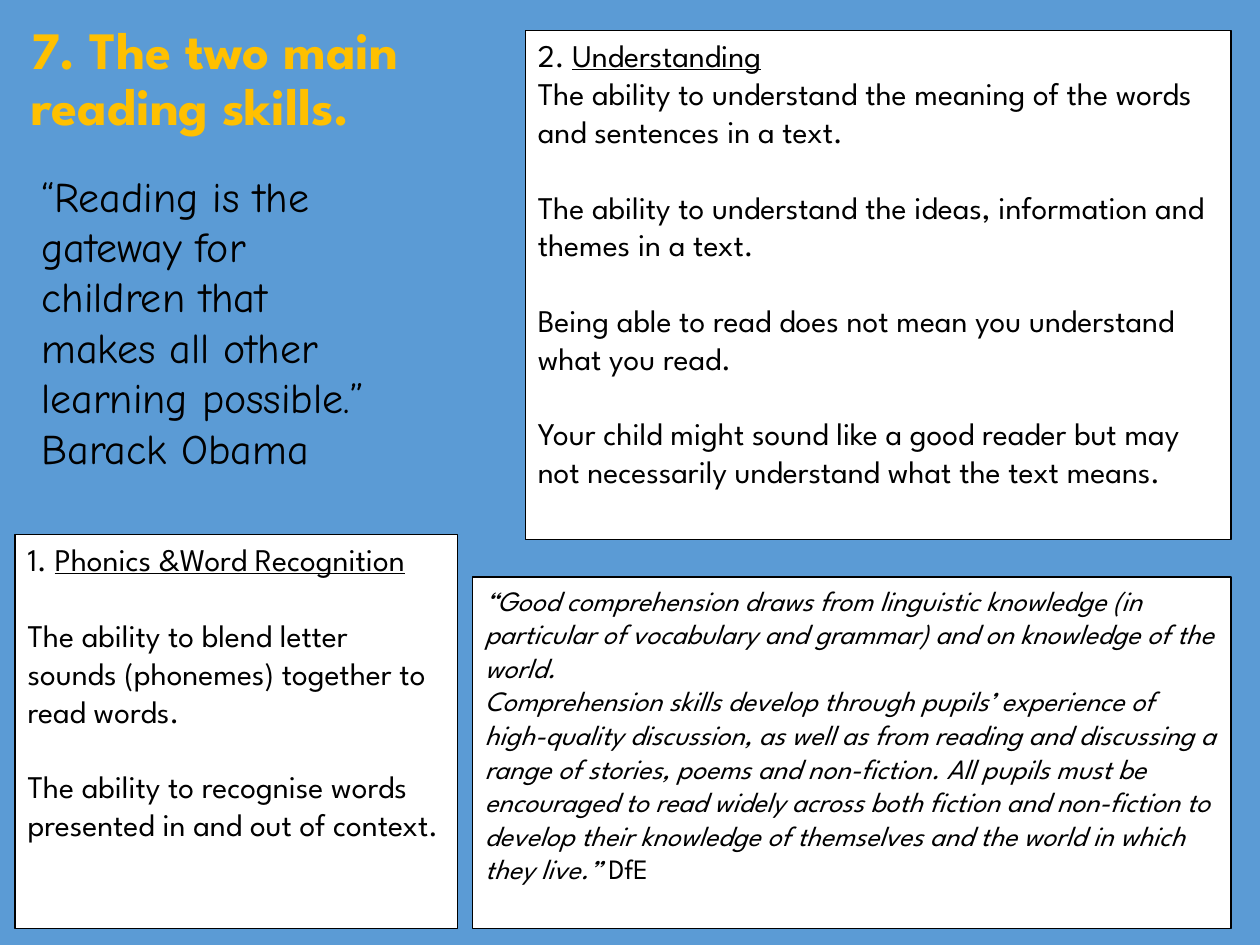
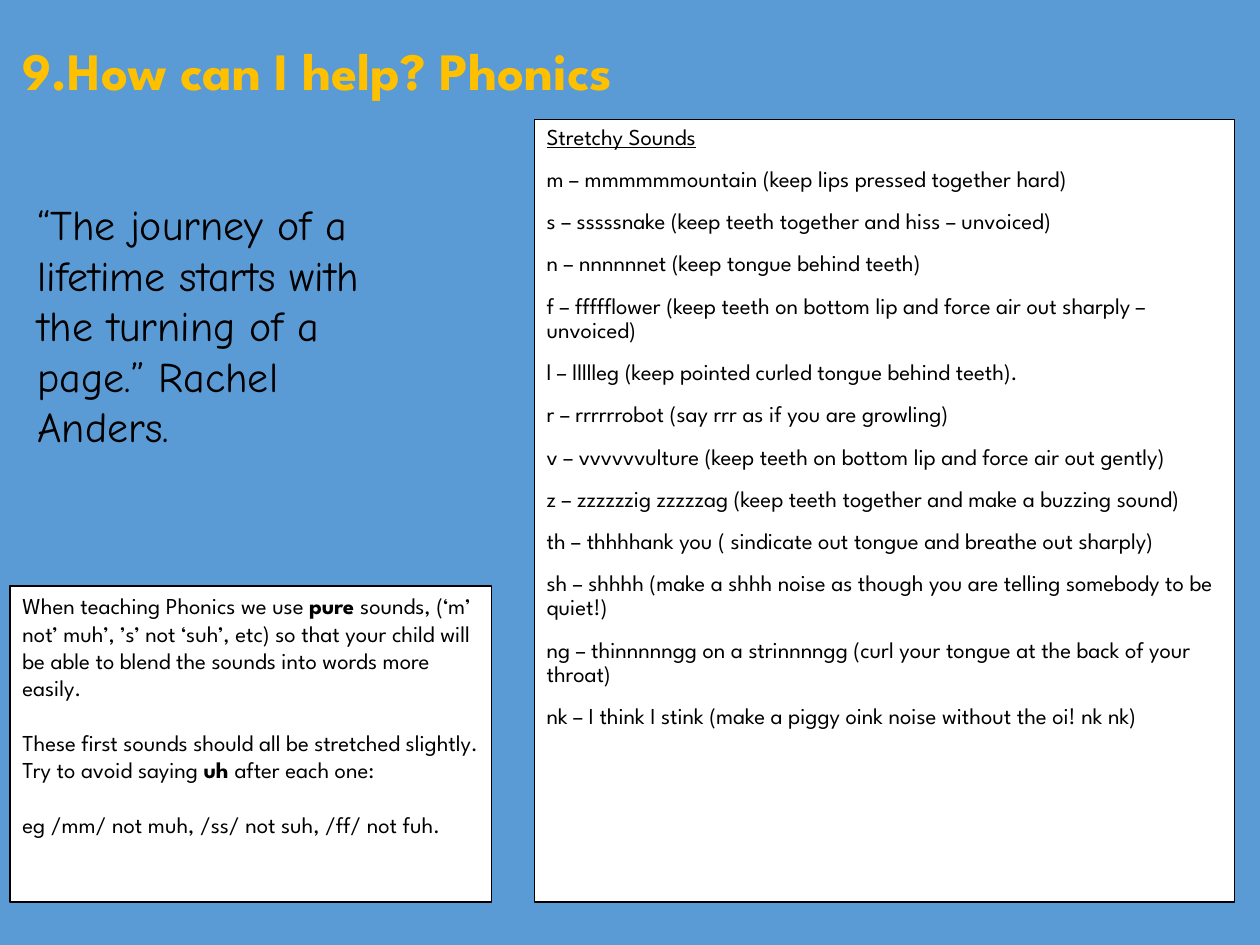
from dataclasses import dataclass

import pptx
import pptx.dml.color
import pptx.enum.shapes
import pptx.enum.text
import pptx.util

Inches = pptx.util.Inches
RGBColor = pptx.dml.color.RGBColor

# Shared look
SKY = RGBColor(0x5B, 0x9B, 0xD5)
GOLD = RGBColor(0xFF, 0xC0, 0x00)
WHITE = RGBColor(0xFF, 0xFF, 0xFF)
BLACK = RGBColor(0x00, 0x00, 0x00)
HEADING_FONT = "League Spartan"
QUOTE_FONT = "Comic Neue"
LINE_PITCH = 1.2  # height of one text line relative to its font size


@dataclass(frozen=True)
class Part:
    """A stretch of text with its own emphasis."""
    text: str
    bold: bool = False
    italic: bool = False
    underline: bool = False


Paragraph = tuple[Part, ...]


@dataclass(frozen=True)
class TextStyle:
    size: float
    font: str = HEADING_FONT
    color: RGBColor = BLACK
    gap: float = 0
    line_spacing: float = 1.0
    inset: tuple[float, float] = (0.1, 0.05)


@dataclass(frozen=True)
class Block:
    """Text at a place, in inches; a card has a white, outlined face."""
    left: float
    top: float
    width: float
    height: float
    style: TextStyle
    paragraphs: tuple[Paragraph, ...]
    card: bool = True
    tight: tuple[int, ...] = ()  # paragraphs that follow without a gap


def plain(*texts: str) -> tuple[Paragraph, ...]:
    return tuple((Part(text),) for text in texts)


def spaced(size: float) -> TextStyle:
    """Card text with one line of space between paragraphs."""
    return TextStyle(size, gap=size * LINE_PITCH)


TITLE = TextStyle(30, color=GOLD)
WRAPPED_TITLE = TextStyle(30, color=GOLD, line_spacing=0.9, inset=(0.13, 0.07))
QUOTE = TextStyle(24, QUOTE_FONT)
SOUND_LIST = TextStyle(13, gap=10, line_spacing=0.9)

READING_SKILLS = (
    Block(0.12, 0.12, 3.51, 2.33, WRAPPED_TITLE,
          ((Part("7. The two main reading skills.", bold=True),),), card=False),
    Block(0.12, 4.24, 3.51, 3.13, spaced(18), (
        (Part("1. "), Part("Phonics &Word Recognition", underline=True)),
        *plain("The ability to blend letter sounds (phonemes) together to read words.",
               "The ability to recognise words presented in and out of context."),
    )),
    Block(4.17, 0.24, 5.6, 4.04, spaced(18), (
        (Part("2. "), Part("Understanding", underline=True)),
        *plain("The ability to understand the meaning of the words and sentences in a text.",
               "The ability to understand the ideas, information and themes in a text.",
               "Being able to read does not mean you understand what you read.",
               "Your child might sound like a good reader but may not necessarily "
               "understand what the text means."),
    ), tight=(1,)),
    Block(3.75, 4.58, 6.02, 2.79, TextStyle(16), (
        (Part("“Good comprehension draws from linguistic knowledge (in particular of "
              "vocabulary and grammar) and on knowledge of the world.", italic=True),),
        (Part("Comprehension skills develop through pupils’ experience of high-quality "
              "discussion, as well as from reading and discussing a range of stories, "
              "poems and non-fiction. All pupils must be encouraged to read widely across "
              "both fiction and non-fiction to develop their knowledge of themselves and "
              "the world in which they live.” ", italic=True), Part("DfE")),
    )),
    Block(0.23, 1.3, 2.88, 1.72, QUOTE,
          plain("“Reading is the gateway for children that makes all other learning "
                "possible.” Barack Obama"), card=False),
)

PHONICS_HELP = (
    Block(4.24, 0.95, 5.56, 6.21, SOUND_LIST, (
        (Part("Stretchy Sounds", underline=True),),
        *plain("m – mmmmmmountain (keep lips pressed together hard)",
               "s – sssssnake (keep teeth together and hiss – unvoiced)",
               "n – nnnnnnet (keep tongue behind teeth)",
               "f – ffffflower (keep teeth on bottom lip and force air out sharply – unvoiced)",
               "l – llllleg (keep pointed curled tongue behind teeth).",
               "r – rrrrrrobot (say rrr as if you are growling)",
               "v – vvvvvvulture (keep teeth on bottom lip and force air out gently)",
               "z – zzzzzzig zzzzzag (keep teeth together and make a buzzing sound)",
               "th – thhhhank you ( sindicate out tongue and breathe out sharply)",
               "sh – shhhh (make a shhh noise as though you are telling somebody to be quiet!)",
               "ng – thinnnnngg on a strinnnngg (curl your tongue at the back of your throat)",
               "nk – I think I stink (make a piggy oink noise without the oi! nk nk)"),
    )),
    Block(0.08, 0.25, 5, 1.11, TITLE,
          ((Part("9.How can I help? Phonics", bold=True),),), card=False),
    Block(0.08, 4.65, 3.82, 2.51, spaced(13), (
        (Part("When teaching Phonics we use "), Part("pure ", bold=True),
         Part("sounds, (‘m’ not’ muh’, ’s’ not ‘suh’, etc) so that your child will be able "
              "to blend the sounds into words more easily.")),
        (Part("These first sounds should all be stretched slightly. Try to avoid saying "),
         Part("uh ", bold=True), Part("after each one:")),
        *plain("eg /mm/ not muh, /ss/ not suh, /ff/ not fuh."),
    )),
    Block(0.2, 1.53, 3.19, 1.31, QUOTE,
          plain("“The journey of a lifetime starts with the turning of a page.” "
                "Rachel Anders."), card=False),
)


def write_text(frame: pptx.text.text.TextFrame, block: Block) -> None:
    style = block.style
    frame.word_wrap = True
    frame.auto_size = pptx.enum.text.MSO_AUTO_SIZE.NONE
    frame.vertical_anchor = pptx.enum.text.MSO_ANCHOR.TOP
    frame.margin_left = frame.margin_right = Inches(style.inset[0])
    frame.margin_top = frame.margin_bottom = Inches(style.inset[1])
    for index, parts in enumerate(block.paragraphs):
        paragraph = frame.paragraphs[0] if index == 0 else frame.add_paragraph()
        paragraph.alignment = pptx.enum.text.PP_ALIGN.LEFT
        paragraph.line_spacing = style.line_spacing
        if index > 0 and index not in block.tight:
            paragraph.space_before = pptx.util.Pt(style.gap)
        for part in parts:
            run = paragraph.add_run()
            run.text = part.text
            run.font.name = style.font
            run.font.size = pptx.util.Pt(style.size)
            run.font.color.rgb = style.color
            run.font.bold = part.bold
            run.font.italic = part.italic
            run.font.underline = part.underline


def draw_block(slide: pptx.slide.Slide, block: Block) -> None:
    place = [Inches(n) for n in (block.left, block.top, block.width, block.height)]
    if block.card:
        holder = slide.shapes.add_shape(pptx.enum.shapes.MSO_SHAPE.RECTANGLE, *place)
        holder.shadow.inherit = False
        holder.fill.solid()
        holder.fill.fore_color.rgb = WHITE
        holder.line.color.rgb = BLACK
        holder.line.width = pptx.util.Pt(0.75)
    else:
        holder = slide.shapes.add_textbox(*place)
    write_text(holder.text_frame, block)


def main() -> None:
    deck = pptx.Presentation()
    deck.slide_width, deck.slide_height = Inches(10), Inches(7.5)
    for blocks in (READING_SKILLS, PHONICS_HELP):
        slide = deck.slides.add_slide(deck.slide_layouts[6])
        slide.background.fill.solid()
        slide.background.fill.fore_color.rgb = SKY
        for block in blocks:
            draw_block(slide, block)
    deck.save("out.pptx")


if __name__ == "__main__":
    main()
